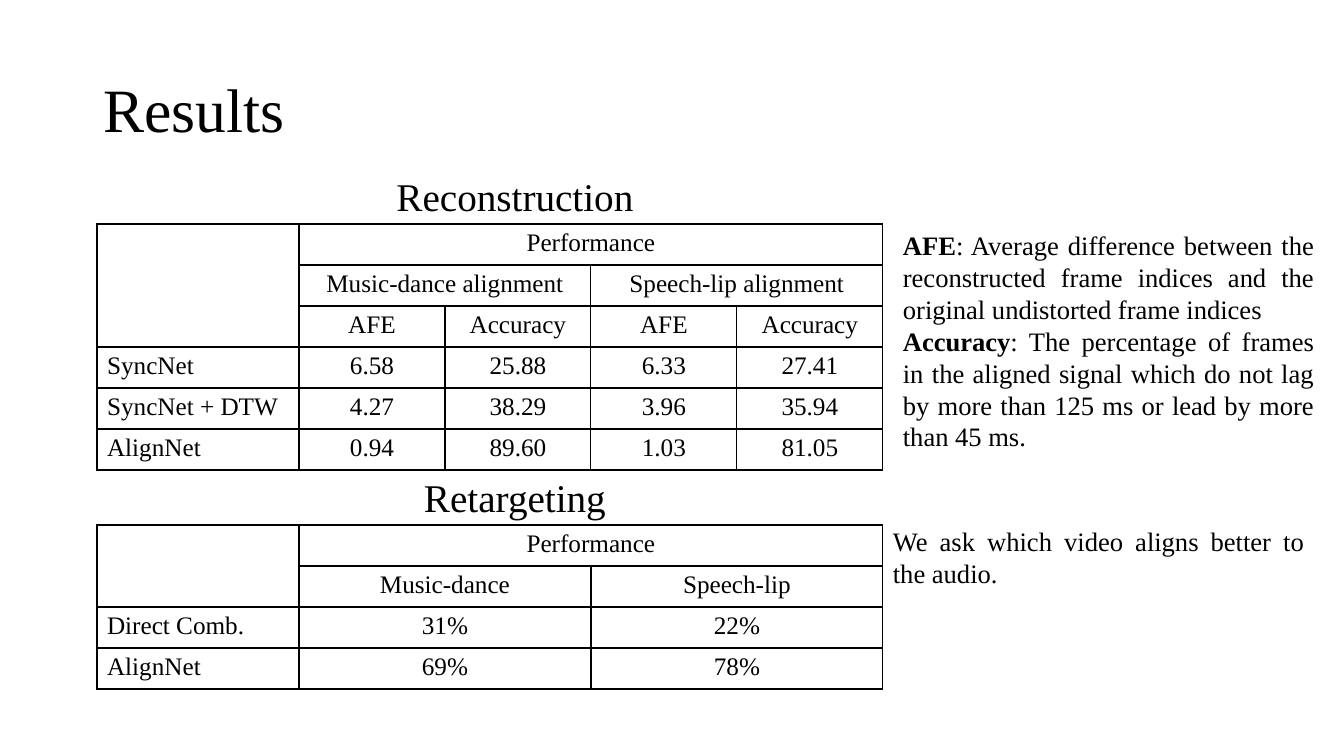
from lxml import etree
from pptx import Presentation
from pptx.dml.color import RGBColor
from pptx.enum.text import MSO_ANCHOR, MSO_AUTO_SIZE, PP_ALIGN
from pptx.oxml.ns import qn
from pptx.util import Emu, Pt

BLACK = RGBColor(0x00, 0x00, 0x00)
FONT = "Times New Roman"
LEFT, CENTER, JUSTIFY = PP_ALIGN.LEFT, PP_ALIGN.CENTER, PP_ALIGN.JUSTIFY
MIDDLE = MSO_ANCHOR.MIDDLE
GROW = MSO_AUTO_SIZE.SHAPE_TO_FIT_TEXT
TITLE_ONLY = 5
SLIDE_W, SLIDE_H = 1344, 756
ROW_H = 41
HEADING_H = 57

RECONSTRUCTION = [
    ["", "Performance", "", "", ""],
    ["", "Music-dance alignment", "", "Speech-lip alignment", ""],
    ["", "AFE", "Accuracy", "AFE", "Accuracy"],
    ["SyncNet", "6.58", "25.88", "6.33", "27.41"],
    ["SyncNet + DTW", "4.27", "38.29", "3.96", "35.94"],
    ["AlignNet", "0.94", "89.60", "1.03", "81.05"],
]
RECONSTRUCTION_SPANS = [(0, 0, 2, 0), (0, 1, 0, 4), (1, 1, 1, 2), (1, 3, 1, 4)]
RETARGETING = [
    ["", "Performance", ""],
    ["", "Music-dance", "Speech-lip"],
    ["Direct Comb.", "31%", "22%"],
    ["AlignNet", "69%", "78%"],
]
RETARGETING_SPANS = [(0, 0, 1, 0), (0, 1, 0, 2)]
METRICS = [
    [("AFE", True), (": Average difference between the reconstructed frame indices "
                     "and the original undistorted frame indices", False)],
    [("Accuracy", True), (": The percentage of frames in the aligned signal which do not lag "
                          "by more than 125 ms or lead by more than 45 ms.", False)],
]
QUESTION = [[("We ask which video aligns better to the audio.", False)]]


def px(length):
    """Turn slide pixels into EMU."""
    return Emu(round(length * 12192000 / SLIDE_W))


def write(paragraph, runs, size, align):
    """Fill a paragraph with (text, bold) runs."""
    paragraph.alignment = align
    for text, bold in runs:
        run = paragraph.add_run()
        run.text = text
        for key, value in {"name": FONT, "size": Pt(size), "bold": bold}.items():
            setattr(run.font, key, value)
        run.font.color.rgb = BLACK


def add_title(slide, box, text):
    """Place and format the title placeholder."""
    title = slide.shapes.title
    title.left, title.top, title.width, title.height = map(px, box)
    title.text_frame.vertical_anchor = MIDDLE
    paragraph = title.text_frame.paragraphs[0]
    paragraph.line_spacing = 0.9
    write(paragraph, [(text, False)], 44, LEFT)


def add_text(slide, box, paragraphs, size, align, wrap=True):
    """Add a text box that grows with its paragraphs."""
    frame = slide.shapes.add_textbox(*map(px, box)).text_frame
    frame.word_wrap = wrap
    frame.auto_size = GROW
    for index, runs in enumerate(paragraphs):
        paragraph = frame.add_paragraph() if index else frame.paragraphs[0]
        write(paragraph, runs, size, align)


def outline_cell(cell):
    """Clear the cell fill and draw thin black borders on all sides."""
    cell.fill.background()
    properties = cell._tc.get_or_add_tcPr()
    for index, side in enumerate(("lnL", "lnR", "lnT", "lnB")):
        line = etree.Element(qn(f"a:{side}"), w=str(Pt(1)))
        fill = etree.SubElement(line, qn("a:solidFill"))
        etree.SubElement(fill, qn("a:srgbClr"), val=str(BLACK))
        properties.insert(index, line)


def add_results(slide, box, heading, rows, spans, label_w=202):
    """Add a heading above a bordered table of scores."""
    left, top, width = box
    add_text(slide, (left + 288, top - HEADING_H, 260, HEADING_H),
             [[(heading, False)]], 28, CENTER, wrap=False)
    columns = len(rows[0])
    table = slide.shapes.add_table(len(rows), columns, px(left), px(top),
                                   px(width), px(ROW_H * len(rows))).table
    table.first_row = table.horz_banding = False
    score_w = (width - label_w) // (columns - 1)
    for index, column in enumerate(table.columns):
        column.width = px(score_w if index else label_w)
    for r, row in enumerate(rows):
        table.rows[r].height = px(ROW_H)
        for c, text in enumerate(row):
            cell = table.cell(r, c)
            outline_cell(cell)
            if text:
                write(cell.text_frame.paragraphs[0], [(text, False)], 18, CENTER if c else LEFT)
    for top_row, first, bottom_row, last in spans:
        table.cell(top_row, first).merge(table.cell(bottom_row, last))


def main():
    """Build the results slide."""
    deck = Presentation()
    deck.slide_width, deck.slide_height = px(SLIDE_W), px(SLIDE_H)
    slide = deck.slides.add_slide(deck.slide_layouts[TITLE_ONLY])
    add_title(slide, (93, 40, 1159, 146), "Results")
    add_results(slide, (97, 224, 786), "Reconstruction", RECONSTRUCTION, RECONSTRUCTION_SPANS)
    add_results(slide, (97, 525, 786), "Retargeting", RETARGETING, RETARGETING_SPANS)
    add_text(slide, (893, 224, 431, 236), METRICS, 19, JUSTIFY)
    add_text(slide, (883, 520, 431, 75), QUESTION, 19, JUSTIFY)
    deck.save("out.pptx")


if __name__ == "__main__":
    main()
